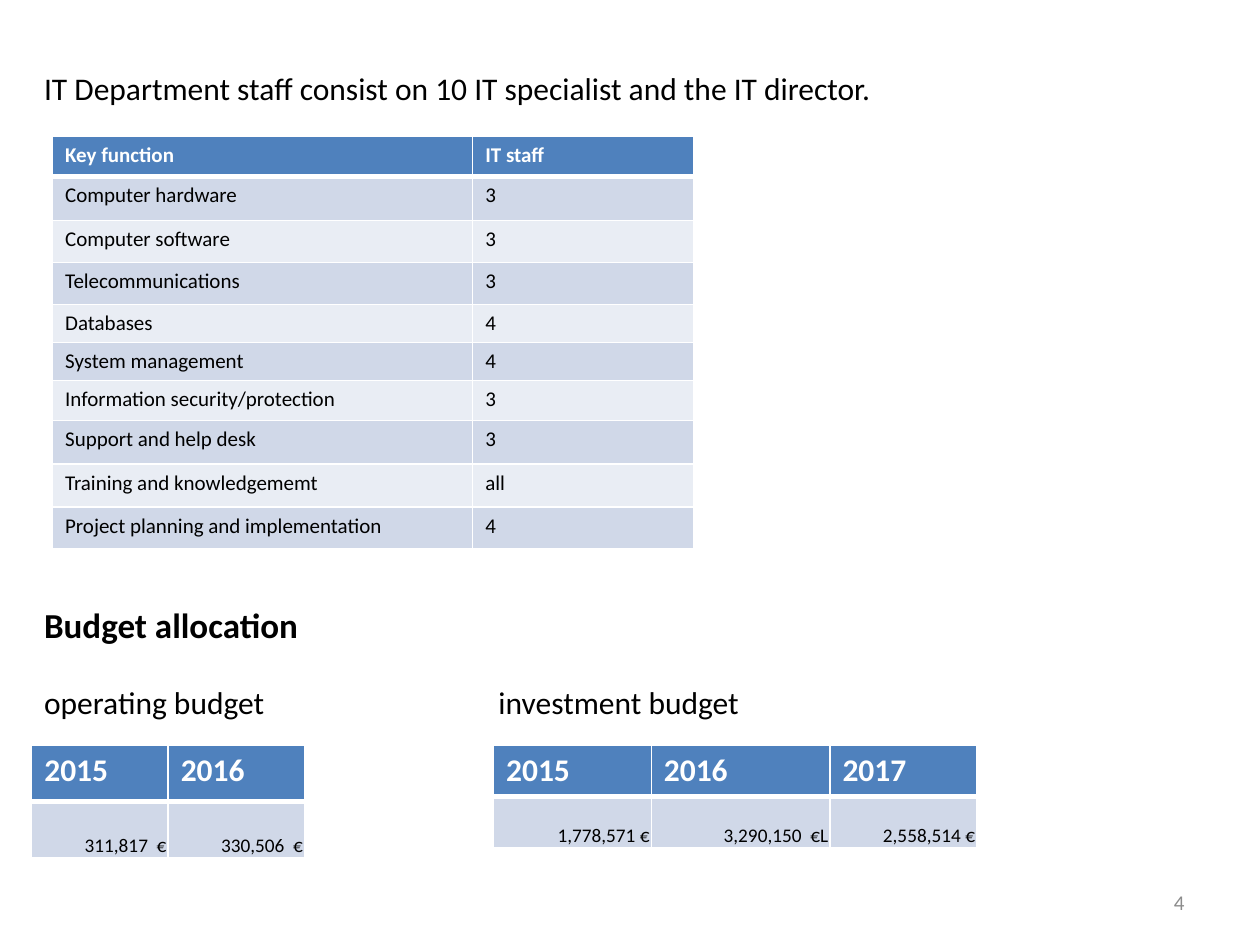
from lxml.etree import SubElement as Sub
from pptx import Presentation
from pptx.dml.color import RGBColor as RGB
from pptx.enum.text import MSO_ANCHOR as Anchor, PP_ALIGN as Align
from pptx.oxml.ns import qn
from pptx.util import Cm, Pt

HUES = {"head": "4F81BD", "odd": "D0D8E8", "even": "E9EDF4",
        "white": "FFFFFF", "black": "000000", "gray": "8C8C8C"}


def write(frame, text, size=18, hue="black", bold=False, align=Align.LEFT):
    frame.word_wrap = True
    para = frame.paragraphs[0]
    para.text = text
    para.alignment = align
    para.font.name = "Calibri"
    para.font.size = Pt(size)
    para.font.bold = bold
    para.font.color.rgb = RGB.from_string(HUES[hue])


def grid(left, top, widths, heights, rows, size, money=False):
    table = slide.shapes.add_table(
        len(rows), len(widths), Cm(left), Cm(top),
        Cm(sum(widths)), Cm(sum(heights))).table
    for col, width in zip(table.columns, widths):
        col.width = Cm(width)
    for r, row in enumerate(rows):
        table.rows[r].height = Cm(heights[r])
        for c, text in enumerate(row):
            cell = table.cell(r, c)
            props = cell._tc.get_or_add_tcPr()
            for side in "LRTB":
                thick = (r == 0 and side == "B") or (r == 1 and side == "T")
                line = Sub(props, qn(f"a:ln{side}"), w=str(Pt(3 if thick else 1)))
                Sub(Sub(line, qn("a:solidFill")), qn("a:srgbClr"), val=HUES["white"])
            cell.fill.solid()
            shade = "head" if r == 0 else "odd" if r % 2 else "even"
            cell.fill.fore_color.rgb = RGB.from_string(HUES[shade])
            if r == 0:
                write(cell.text_frame, text, size, "white", True)
            elif money:
                cell.vertical_anchor = Anchor.BOTTOM
                cell.margin_left = cell.margin_right = cell.margin_top = Cm(0.03)
                cell.margin_bottom = 0
                write(cell.text_frame, text, 11, align=Align.RIGHT)
            else:
                write(cell.text_frame, text, size)


deck = Presentation()
deck.slide_width, deck.slide_height = Cm(25.4), Cm(19.05)
slide = deck.slides.add_slide(deck.slide_layouts[6])

labels = [
    ("IT Department staff consist on 10 IT specialist and the IT director.",
     0.64, 1.27, 23.5, {}),
    ("Budget allocation", 0.64, 12.05, 10, {"size": 20, "bold": True}),
    ("operating budget", 0.64, 13.65, 8, {}),
    ("investment budget", 9.8, 13.65, 8, {}),
    ("4", 18.2, 17.8, 5.93, {"size": 12, "hue": "gray", "align": Align.RIGHT}),
]
for text, left, top, width, style in labels:
    box = slide.shapes.add_textbox(Cm(left), Cm(top), Cm(width), Cm(1))
    write(box.text_frame, text, **style)

staff = [
    ("Key function", "IT staff"),
    ("Computer hardware", "3"),
    ("Computer software", "3"),
    ("Telecommunications", "3"),
    ("Databases", "4"),
    ("System management", "4"),
    ("Information security/protection", "3"),
    ("Support and help desk", "3"),
    ("Training and knowledgememt", "all"),
    ("Project planning and implementation", "4"),
]
tall = [0.81, 0.88, 0.85, 0.85, 0.76, 0.76, 0.81, 0.88, 0.86, 0.84]
grid(1.06, 2.75, [8.47, 4.45], tall, staff, 12)

running = [("2015", "2016"), ("311,817  €", "330,506  €")]
grid(0.64, 15.03, [2.75] * 2, [1.13] * 2, running, 18, money=True)

invest = [("2015", "2016", "2017"),
          ("1,778,571 €", "3,290,150  €L", "2,558,514 €")]
grid(9.95, 15.03, [3.18, 3.6, 2.96], [1.03] * 2, invest, 18, money=True)

deck.save("out.pptx")
